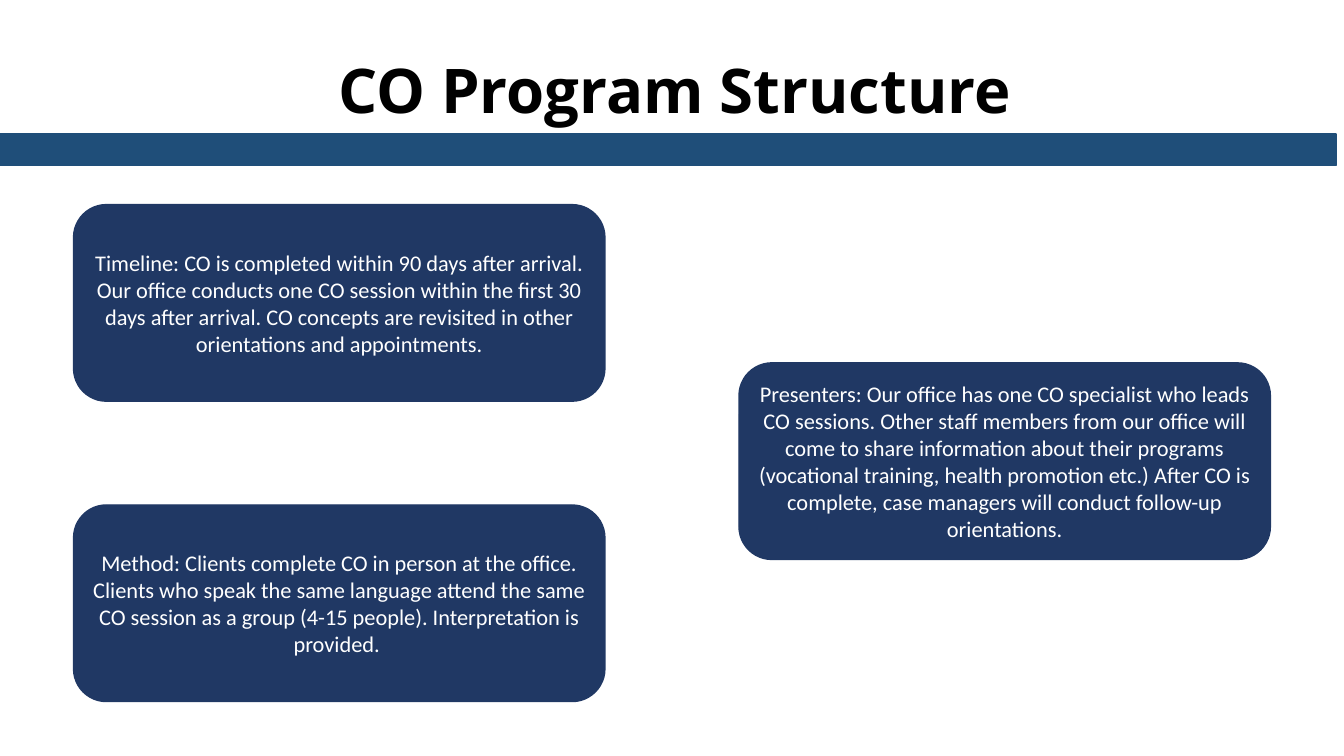
from pptx import Presentation
from pptx.dml.color import RGBColor
from pptx.enum.shapes import MSO_SHAPE as Shape
from pptx.enum.text import MSO_ANCHOR as Anchor, MSO_AUTO_SIZE as AutoSize, PP_ALIGN as Align
from pptx.util import Inches, Pt

TITLE = "CO Program Structure"
TITLE_AREA = (0.58, 0.47, 12.23, 0.84)
BAND_AREA = (-0.08, 1.33, 13.33, 0.31)

CARD_SIZE = (5.27, 1.95)
LEFT_COLUMN, RIGHT_COLUMN = 0.73, 7.33
CARDS = [
    (LEFT_COLUMN, 2.03,
     "Timeline: CO is completed within 90 days after arrival. Our office conducts one CO "
     "session within the first 30 days after arrival. CO concepts are revisited in other "
     "orientations and appointments."),
    (LEFT_COLUMN, 5.01,
     "Method: Clients complete CO in person at the office. Clients who speak the same "
     "language attend the same CO session as a group (4-15 people). Interpretation is "
     "provided. "),
    (RIGHT_COLUMN, 3.6,
     "Presenters: Our office has one CO specialist who leads CO sessions. Other staff "
     "members from our office will come to share information about their programs "
     "(vocational training, health promotion etc.) After CO is complete, case managers "
     "will conduct follow-up orientations."),
]

THEME = {
    "band": RGBColor.from_string("1F4E79"),
    "card": RGBColor.from_string("203864"),
    "title": {"name": "Open Sans", "size": 44, "bold": True, "color": "000000"},
    "body": {"name": "Calibri", "size": 16, "bold": False, "color": "FFFFFF"},
}


def write_text(frame, text, style):
    frame.word_wrap = True
    para = frame.paragraphs[0]
    para.alignment = Align.CENTER
    span = para.add_run()
    span.text = text
    span.font.name = style["name"]
    span.font.size = Pt(style["size"])
    span.font.bold = style["bold"]
    span.font.color.rgb = RGBColor.from_string(style["color"])


def add_block(page, kind, area, color):
    """Add a flat preset shape whose outline matches its fill."""
    block = page.shapes.add_shape(kind, *map(Inches, area))
    block.shadow.inherit = False
    block.fill.solid()
    block.fill.fore_color.rgb = color
    block.line.color.rgb = color
    block.line.width = Pt(1)
    return block


def main():
    deck = Presentation()
    deck.slide_width, deck.slide_height = Inches(13.33), Inches(7.5)
    page = deck.slides.add_slide(deck.slide_layouts[6])

    title = page.shapes.add_textbox(*map(Inches, TITLE_AREA))
    write_text(title.text_frame, TITLE, THEME["title"])
    title.text_frame.auto_size = AutoSize.SHAPE_TO_FIT_TEXT

    add_block(page, Shape.RECTANGLE, BAND_AREA, THEME["band"])
    for left, top, text in CARDS:
        card = add_block(page, Shape.ROUNDED_RECTANGLE, (left, top, *CARD_SIZE), THEME["card"])
        card.text_frame.vertical_anchor = Anchor.MIDDLE
        write_text(card.text_frame, text, THEME["body"])

    deck.save("out.pptx")


if __name__ == "__main__":
    main()
